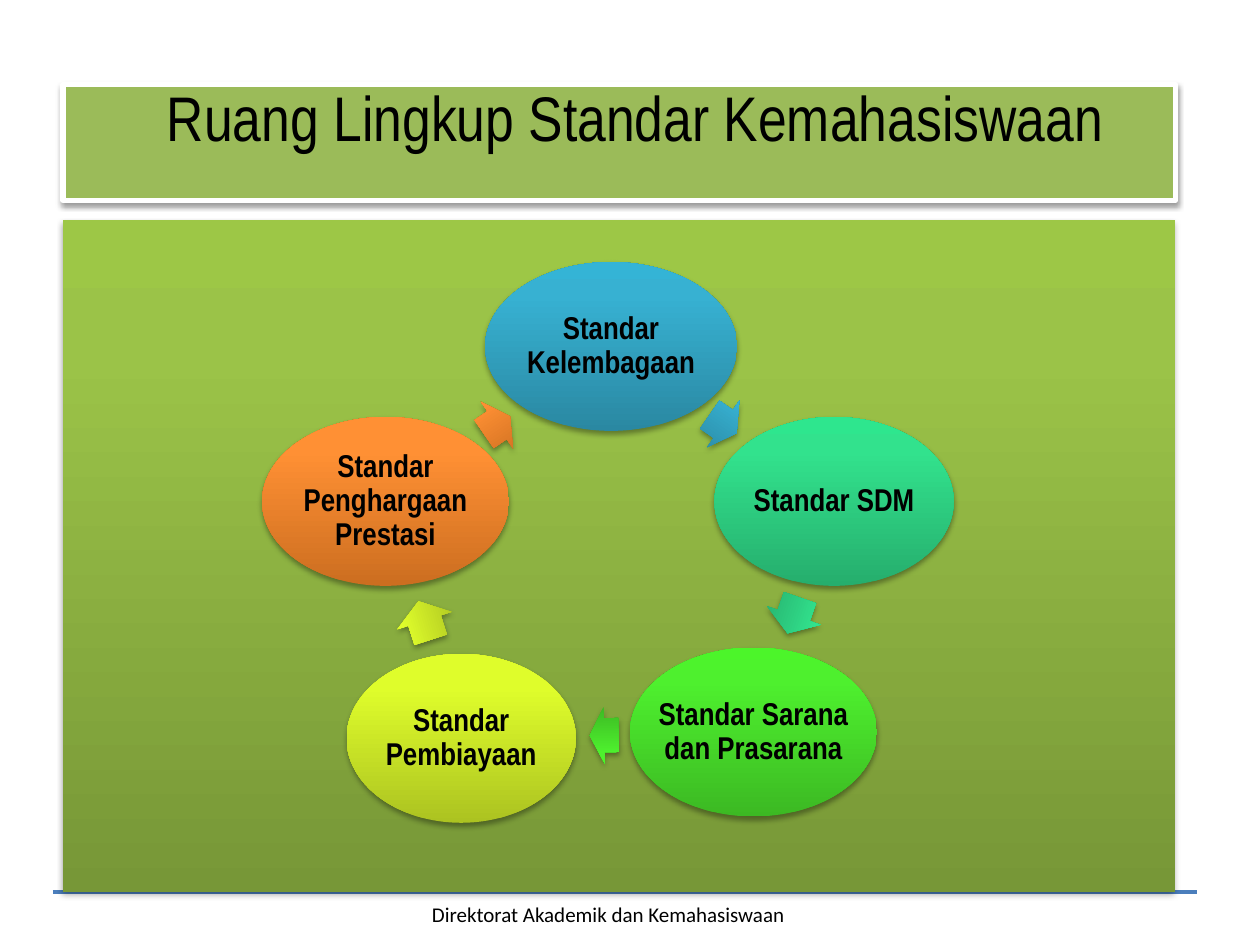
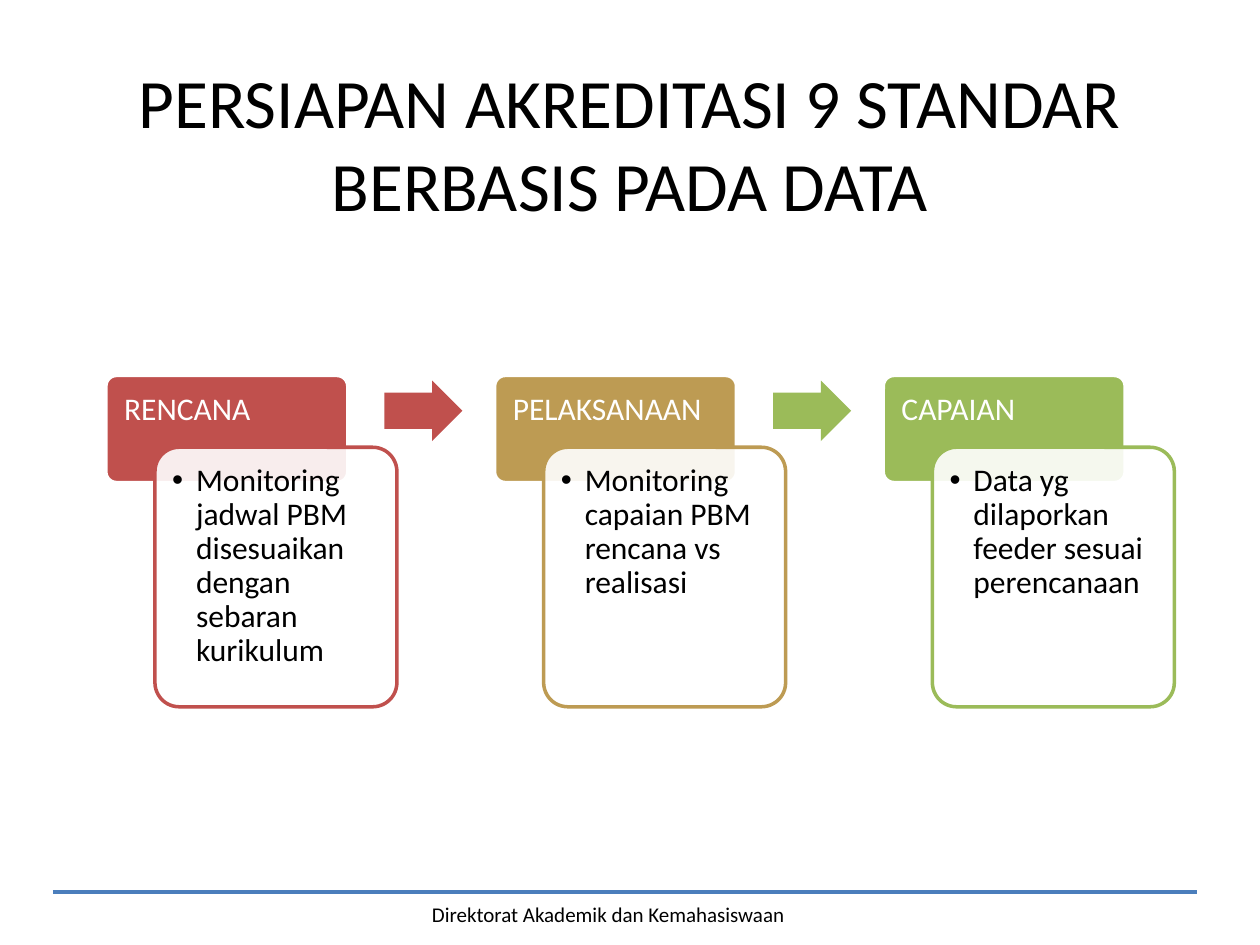
from copy import deepcopy
from dataclasses import dataclass

from lxml import etree
from pptx import Presentation
from pptx.dml.color import RGBColor
from pptx.enum.shapes import MSO_CONNECTOR, MSO_SHAPE
from pptx.enum.text import MSO_ANCHOR, MSO_AUTO_SIZE, PP_ALIGN
from pptx.oxml.ns import qn
from pptx.util import Emu, Inches, Pt

# Enum members
RECTANGLE = MSO_SHAPE.RECTANGLE
ROUNDED = MSO_SHAPE.ROUNDED_RECTANGLE
ELLIPSE = MSO_SHAPE.OVAL
ARROW = MSO_SHAPE.RIGHT_ARROW
STRAIGHT = MSO_CONNECTOR.STRAIGHT
TOP, MIDDLE = MSO_ANCHOR.TOP, MSO_ANCHOR.MIDDLE
LEFT, CENTER = PP_ALIGN.LEFT, PP_ALIGN.CENTER
NO_AUTOFIT = MSO_AUTO_SIZE.NONE

# Slide grid: 100 columns by 75 rows
WIDTH, HEIGHT = Inches(10), Inches(7.5)
COLUMN, ROW = WIDTH / 100, HEIGHT / 75
TITLE_ONLY = 5

# Fonts and colours
NARROW, PLAIN = "Arial Narrow", "Calibri"
BLACK = RGBColor(0x00, 0x00, 0x00)
WHITE = RGBColor(0xFF, 0xFF, 0xFF)
RULE_BLUE = RGBColor(0x4B, 0x7E, 0xBC)
GREEN = RGBColor(0x9B, 0xBB, 0x59)
RED = RGBColor(0xC0, 0x50, 0x4D)
GOLD = RGBColor(0xBD, 0x9B, 0x53)

Gradient = tuple[RGBColor, RGBColor, RGBColor]
STOPS = (0, 0.8, 1)
PANEL_SHADES = (RGBColor(0x77, 0x97, 0x37), RGBColor(0x9B, 0xC3, 0x48), RGBColor(0x9D, 0xC7, 0x46))
BLUE_SHADES = (RGBColor(0x2A, 0x88, 0xA2), RGBColor(0x37, 0xB1, 0xD2), RGBColor(0x34, 0xB4, 0xD6))
MINT_SHADES = (RGBColor(0x26, 0xAE, 0x6D), RGBColor(0x32, 0xE2, 0x8D), RGBColor(0x2E, 0xE6, 0x8E))
LIME_SHADES = (RGBColor(0x3C, 0xB9, 0x23), RGBColor(0x4E, 0xF0, 0x2E), RGBColor(0x4C, 0xF5, 0x2A))
YELLOW_SHADES = (RGBColor(0xAC, 0xC3, 0x21), RGBColor(0xDF, 0xFD, 0x2B), RGBColor(0xE1, 0xFF, 0x2B))
ORANGE_SHADES = (RGBColor(0xCC, 0x6E, 0x20), RGBColor(0xFF, 0x90, 0x34), RGBColor(0xFF, 0x91, 0x36))


@dataclass(frozen=True)
class Area:
    """A place on the grid, in columns and rows."""
    left: float
    top: float
    width: float
    height: float

    def lengths(self) -> tuple[Emu, Emu, Emu, Emu]:
        return (Emu(round(self.left * COLUMN)), Emu(round(self.top * ROW)),
                Emu(round(self.width * COLUMN)), Emu(round(self.height * ROW)))


@dataclass(frozen=True)
class TextStyle:
    font: str
    size: float
    color: RGBColor = BLACK
    bold: bool = False
    align: PP_ALIGN = LEFT
    anchor: MSO_ANCHOR = TOP
    spacing: float = 1.0
    inset: tuple[float, float] = (0.1, 0.05)
    wrap: bool = True


@dataclass(frozen=True)
class Standard:
    """One ellipse of the cycle and the arrow that leaves it."""
    text: str
    left: float
    top: float
    width: float
    arrow: Area
    turn: float
    shades: Gradient


@dataclass(frozen=True)
class Stage:
    heading: str
    detail: str
    color: RGBColor


FOOTER_STYLE = TextStyle(PLAIN, 12, wrap=False)
BAND_TITLE = TextStyle(NARROW, 36, align=CENTER, anchor=MIDDLE)
PLAIN_TITLE = TextStyle(PLAIN, 39.6, align=CENTER, anchor=MIDDLE)
CYCLE_STYLE = TextStyle(NARROW, 18, bold=True, align=CENTER, anchor=MIDDLE,
                        spacing=0.9, inset=(0.1, 0.03))
HEADING_STYLE = TextStyle(PLAIN, 18, color=WHITE, spacing=0.9, inset=(0.12, 0.12))
DETAIL_STYLE = TextStyle(PLAIN, 18, spacing=0.9, inset=(0.08, 0.08))

ELLIPSE_ROWS = 13.4
STANDARDS = (
    Standard("Standar Kelembagaan", 38.5, 20.8, 20,
             Area(56.1, 31.4, 2.6, 4.5), 34.7, BLUE_SHADES),
    Standard("Standar SDM", 56.7, 33.1, 19,
             Area(61.5, 46.6, 3, 4.5), 109.2, MINT_SHADES),
    Standard("Standar Sarana dan Prasarana", 50, 51.4, 19.6,
             Area(46.8, 56.1, 2.3, 4.5), 178.9, LIME_SHADES),
    Standard("Standar Pembiayaan", 27.5, 51.9, 18.2,
             Area(32.1, 47, 3.2, 4.5), 252.3, YELLOW_SHADES),
    Standard("Standar Penghargaan Prestasi", 20.8, 33.1, 19.6,
             Area(38.2, 31.5, 2.5, 4.5), 325.5, ORANGE_SHADES),
)

STAGE_LEFT, STAGE_STEP = 8.4, 30.85
STAGES = (
    Stage("RENCANA", "Monitoring jadwal PBM disesuaikan dengan sebaran kurikulum", RED),
    Stage("PELAKSANAAN", "Monitoring capaian PBM rencana vs realisasi", GOLD),
    Stage("CAPAIAN", "Data yg dilaporkan feeder sesuai perencanaan", GREEN),
)


# Formatting helpers
def set_all(target, values: dict) -> None:
    for name, value in values.items():
        setattr(target, name, value)


def write(box, text: str, style: TextStyle):
    """Put one formatted paragraph into a shape and return it."""
    frame = box.text_frame
    across, down = (Inches(inset) for inset in style.inset)
    set_all(frame, {
        "auto_size": NO_AUTOFIT, "word_wrap": style.wrap, "vertical_anchor": style.anchor,
        "margin_left": across, "margin_right": across,
        "margin_top": down, "margin_bottom": down,
    })
    para = frame.paragraphs[0]
    set_all(para, {"alignment": style.align, "line_spacing": style.spacing})
    span = para.add_run()
    span.text = text
    set_all(span.font, {"name": style.font, "size": Pt(style.size), "bold": style.bold})
    span.font.color.rgb = style.color
    return para


def add_bullet(para, hanging: float) -> None:
    properties = para._p.get_or_add_pPr()
    indent = Inches(hanging)
    properties.set("marL", str(indent))
    properties.set("indent", str(-indent))
    bullet_font = etree.SubElement(properties, qn("a:buFont"))
    bullet_font.set("typeface", "Arial")
    etree.SubElement(properties, qn("a:buChar")).set("char", "•")


def add_shadow(shape, opacity: int, distance: float) -> None:
    effects = shape.element.spPr.find(qn("a:effectLst"))
    shadow = etree.SubElement(effects, qn("a:outerShdw"), blurRad=str(Pt(3.1)),
                              dist=str(Pt(distance)), dir="5400000", rotWithShape="0")
    color = etree.SubElement(shadow, qn("a:srgbClr"), val=str(BLACK))
    etree.SubElement(color, qn("a:alpha"), val=str(opacity * 1000))


def set_opacity(shape, percent: int) -> None:
    color = shape.element.spPr.find(f"{qn('a:solidFill')}/{qn('a:srgbClr')}")
    etree.SubElement(color, qn("a:alpha"), val=str(percent * 1000))


# Drawing helpers
def draw_shape(page, kind: MSO_SHAPE, area: Area, fill: RGBColor | None = None,
               line: RGBColor | None = None, line_width: float = 2,
               adjustments: tuple[float, ...] = ()):
    shape = page.shapes.add_shape(kind, *area.lengths())
    shape.shadow.inherit = False
    for index, value in enumerate(adjustments):
        shape.adjustments[index] = value
    if fill is not None:
        shape.fill.solid()
        shape.fill.fore_color.rgb = fill
    if line is None:
        shape.line.fill.background()
    else:
        shape.line.color.rgb = line
        shape.line.width = Pt(line_width)
    return shape


def draw_glossy(page, kind: MSO_SHAPE, area: Area, shades: Gradient,
                adjustments: tuple[float, ...] = ()):
    """Draw a shape that darkens towards its foot and casts a soft shadow."""
    shape = draw_shape(page, kind, area, adjustments=adjustments)
    shape.fill.gradient()
    shape.fill.gradient_angle = 90
    stop_list = shape.element.spPr.find(f".//{qn('a:gsLst')}")
    stop_list.insert(1, deepcopy(stop_list[0]))
    for stop, position, shade in zip(shape.fill.gradient_stops, STOPS, shades):
        stop.position = position
        stop.color.rgb = shade
    add_shadow(shape, 35, 1.8)
    return shape


def draw_text(page, area: Area, text: str, style: TextStyle) -> None:
    write(page.shapes.add_textbox(*area.lengths()), text, style)


def draw_footer(page) -> None:
    draw_text(page, Area(33.3, 71.1, 30.8, 3), "Direktorat Akademik dan Kemahasiswaan", FOOTER_STYLE)
    left, top, width, _ = Area(4.2, 70.8, 90.8, 0).lengths()
    rule = page.shapes.add_connector(STRAIGHT, left, top, left + width, top)
    rule.line.color.rgb = RULE_BLUE
    rule.line.width = Pt(2.25)
    etree.SubElement(rule.element.spPr, qn("a:effectLst"))


def place_title(page, area: Area, text: str, style: TextStyle) -> None:
    """Format the title placeholder and bring it above what is drawn so far."""
    title = page.shapes.title
    title.left, title.top, title.width, title.height = area.lengths()
    write(title, text, style)
    title.element.getparent().append(title.element)


def new_page(deck):
    page = deck.slides.add_slide(deck.slide_layouts[TITLE_ONLY])
    draw_footer(page)
    return page


# Slides
def build_cycle(deck) -> None:
    page = new_page(deck)
    band = draw_shape(page, RECTANGLE, Area(5, 6.7, 88.3, 9.2), GREEN, WHITE, 3)
    add_shadow(band, 38, 1.6)
    place_title(page, Area(5, 3, 90.8, 12.5), "Ruang Lingkup Standar Kemahasiswaan", BAND_TITLE)
    draw_glossy(page, RECTANGLE, Area(5, 17.5, 88.3, 53.3), PANEL_SHADES)
    for standard in STANDARDS:
        area = Area(standard.left, standard.top, standard.width, ELLIPSE_ROWS)
        draw_glossy(page, ELLIPSE, area, standard.shades)
        draw_text(page, area, standard.text, CYCLE_STYLE)
        arrow = draw_glossy(page, ARROW, standard.arrow, standard.shades, (0.6, 0.5))
        arrow.rotation = standard.turn


def build_stages(deck) -> None:
    page = new_page(deck)
    place_title(page, Area(7.5, 4.2, 85, 14.2),
                "PERSIAPAN AKREDITASI 9 STANDAR BERBASIS PADA DATA", PLAIN_TITLE)
    for index, stage in enumerate(STAGES):
        left = STAGE_LEFT + index * STAGE_STEP
        heading = draw_shape(page, ROUNDED, Area(left, 29.8, 19.2, 8.5), stage.color, WHITE,
                             adjustments=(0.1,))
        write(heading, stage.heading, HEADING_STYLE)
        card = draw_shape(page, ROUNDED, Area(left + 3.9, 35.5, 19.2, 20.6), WHITE, stage.color,
                          adjustments=(0.1,))
        set_opacity(card, 90)
        add_bullet(write(card, stage.detail, DETAIL_STYLE), 0.19)
        # The first arrow keeps its stage's colour, the next takes the following one's
        if index < len(STAGES) - 1:
            arrow_color = (RED, GREEN)[index]
            draw_shape(page, ARROW, Area(left + 22.1, 30.2, 6.2, 4.8), arrow_color,
                       adjustments=(0.6, 0.5))


def main() -> None:
    deck = Presentation()
    deck.slide_width, deck.slide_height = WIDTH, HEIGHT
    build_cycle(deck)
    build_stages(deck)
    deck.save("out.pptx")


if __name__ == "__main__":
    main()
